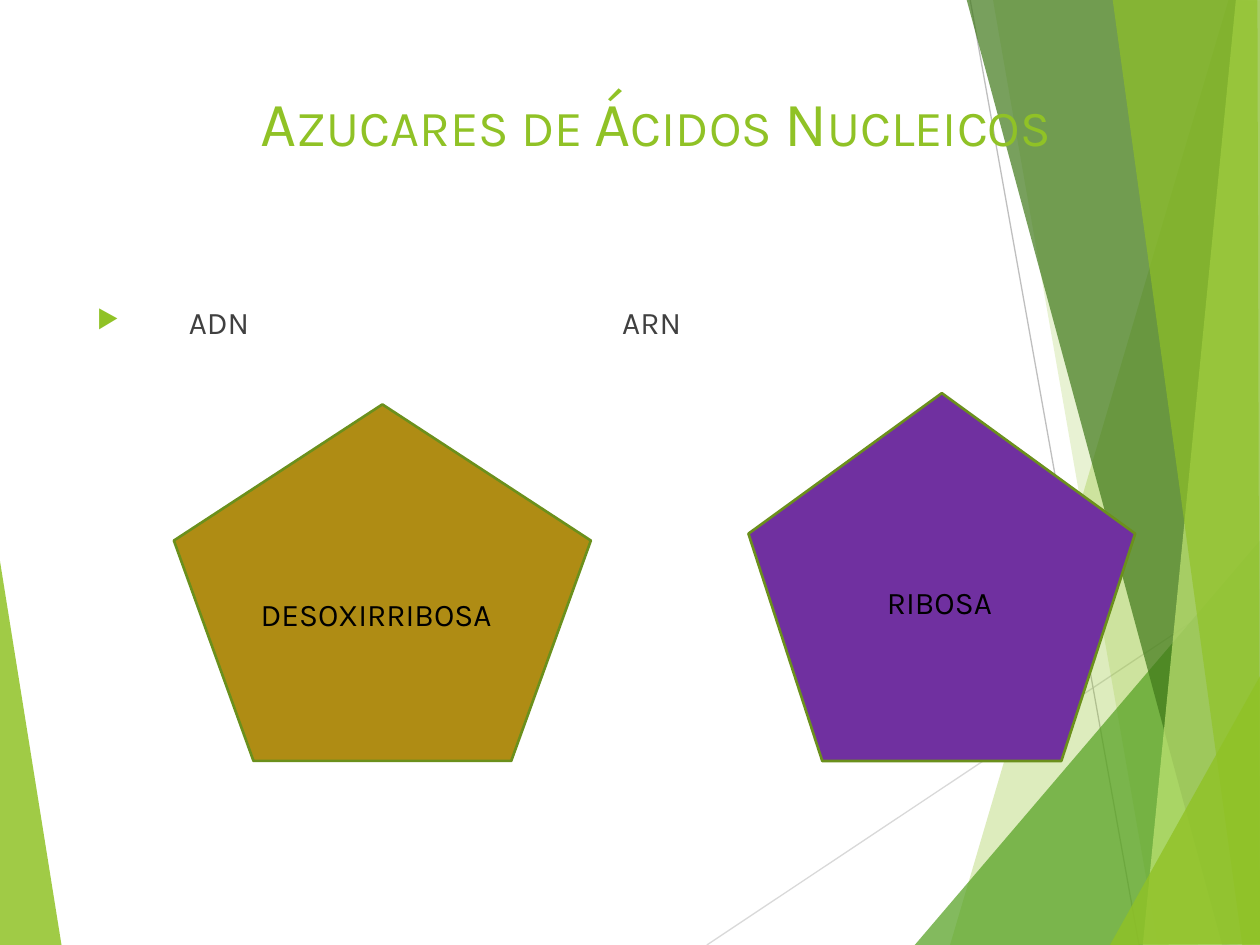
from lxml import etree
from pptx import Presentation
from pptx.dml.color import RGBColor
from pptx.enum.shapes import MSO_CONNECTOR, MSO_SHAPE
from pptx.enum.text import MSO_ANCHOR, MSO_AUTO_SIZE, PP_ALIGN
from pptx.oxml.ns import qn
from pptx.util import Inches, Pt

STRAIGHT = MSO_CONNECTOR.STRAIGHT
PENTAGON = MSO_SHAPE.REGULAR_PENTAGON
TOP = MSO_ANCHOR.TOP
LEFT = PP_ALIGN.LEFT
NO_AUTOSIZE = MSO_AUTO_SIZE.NONE
FIT_SHAPE = MSO_AUTO_SIZE.SHAPE_TO_FIT_TEXT

FONT = "Karla"
LIME = RGBColor(0x90, 0xC2, 0x26)
GREEN = RGBColor(0x54, 0xA0, 0x21)
DARK_GREEN = RGBColor(0x3F, 0x78, 0x19)
PALE_LIME = RGBColor(0xC0, 0xE4, 0x74)
OLIVE = RGBColor(0x6B, 0x90, 0x1C)
LIGHT_GRAY = RGBColor(0xD9, 0xD9, 0xD9)
GRAY = RGBColor(0xBF, 0xBF, 0xBF)
CHARCOAL = RGBColor(0x40, 0x40, 0x40)
BLACK = RGBColor(0, 0, 0)
OCHRE = RGBColor(0xAF, 0x8C, 0x14)
PURPLE = RGBColor(0x70, 0x30, 0xA0)

LEFT_FACET = ([(-0.01, 4.39), (0.49, 7.51), (-0.01, 7.5)], LIME, 85)
RIGHT_FACETS = [
    ([(9.75, 0), (7.54, 7.5), (10.02, 7.51), (10.01, 0.01)], LIME, 30),
    ([(7.88, -0.01), (9.19, 7.5), (10.01, 7.5), (10.01, -0.01)], LIME, 20),
    ([(7.26, 7.5), (10, 4.29), (10.01, 7.5)], GREEN, 72),
    ([(7.67, -0.01), (9.7, 7.5), (10.01, 7.49), (10.01, -0.01)], DARK_GREEN, 70),
    ([(9.81, -0.01), (9.07, 7.5), (10.01, 7.5), (10, -0.01)], PALE_LIME, 70),
    ([(8.83, -0.01), (9.86, 7.5), (10, 7.5), (9.98, -0.01)], LIME, 65),
    ([(8.81, 7.5), (10.01, 5.35), (10.01, 7.49)], LIME, 80),
]
RAYS = [
    ((5.61, 7.5), (10.01, 4.57), LIGHT_GRAY),
    ((7.7, 0), (9.04, 7.5), GRAY),
]
SUGARS = [
    ((1.38, 3.21, 3.31, 2.83), OCHRE),
    ((5.94, 3.12, 3.07, 2.92), PURPLE),
]
SUGAR_NAMES = [
    ("DESOXIRRIBOSA", (1.97, 4.67, 2.12, 0.4)),
    ("RIBOSA", (6.94, 4.58, 1.09, 0.4)),
]


def inches(values):
    """Convert a sequence of numbers to lengths."""
    return [Inches(value) for value in values]


def add_facet(slide, points, color, opacity):
    """Add a translucent polygon of the background."""
    start, *rest = [inches(point) for point in points]
    builder = slide.shapes.build_freeform(*start)
    builder.add_line_segments(rest)
    facet = builder.convert_to_shape()
    facet.shadow.inherit = False
    facet.fill.solid()
    facet.fill.fore_color.rgb = color
    facet.line.fill.background()
    fill_color = facet.fill._xPr.find(qn("a:solidFill"))[0]
    etree.SubElement(fill_color, qn("a:alpha"), val=str(opacity * 1000))


def add_ray(slide, start, end, color):
    """Add a thin background line."""
    ray = slide.shapes.add_connector(STRAIGHT, *inches(start + end))
    ray.line.color.rgb = color
    ray.line.width = Pt(0.75)
    etree.SubElement(ray._element.spPr, qn("a:effectLst"))


def style_font(paragraph, size, color):
    """Set the font of a paragraph."""
    paragraph.font.name = FONT
    paragraph.font.size = Pt(size)
    paragraph.font.color.rgb = color


def set_title(slide, text):
    """Place the title in front of the background."""
    title = slide.shapes.title
    title.left, title.top, title.width, title.height = inches((1.97, 0.61, 7.68, 1.25))
    frame = title.text_frame
    frame.text = text
    frame.vertical_anchor = TOP
    frame.auto_size = NO_AUTOSIZE
    paragraph = frame.paragraphs[0]
    paragraph.alignment = LEFT
    style_font(paragraph, 36, LIME)
    for run in paragraph.runs:
        run.font._element.set("cap", "small")
    slide.shapes._spTree.append(title._element)


def add_label(slide, text, box, color, wrap=False):
    """Add a line of text and return its paragraph."""
    frame = slide.shapes.add_textbox(*inches(box)).text_frame
    frame.word_wrap = wrap
    frame.auto_size = NO_AUTOSIZE if wrap else FIT_SHAPE
    frame.text = text
    paragraph = frame.paragraphs[0]
    style_font(paragraph, 18, color)
    return paragraph


def add_bullet(paragraph, indent):
    """Give a paragraph a green arrow bullet with a hanging indent."""
    properties = paragraph._p.get_or_add_pPr()
    properties.set("marL", str(Inches(indent)))
    properties.set("indent", str(-Inches(indent)))
    bullet_color = etree.Element(qn("a:buClr"))
    etree.SubElement(bullet_color, qn("a:srgbClr"), val=str(LIME))
    bullet_size = etree.Element(qn("a:buSzPct"), val="80000")
    bullet = etree.Element(qn("a:buChar"), char="▶")
    for position, part in enumerate((bullet_color, bullet_size, bullet)):
        properties.insert(position, part)


def add_sugar(slide, box, color):
    """Add the pentagon of a sugar."""
    sugar = slide.shapes.add_shape(PENTAGON, *inches(box))
    sugar.shadow.inherit = False
    sugar.fill.solid()
    sugar.fill.fore_color.rgb = color
    sugar.line.color.rgb = OLIVE
    sugar.line.width = Pt(1.5)


def main():
    """Build the slide and save it."""
    deck = Presentation()
    deck.slide_width, deck.slide_height = inches((10, 7.5))
    slide = deck.slides.add_slide(deck.slide_layouts[5])
    add_facet(slide, *LEFT_FACET)
    for ray in RAYS:
        add_ray(slide, *ray)
    for facet in RIGHT_FACETS:
        add_facet(slide, *facet)
    set_title(slide, "Azucares de Ácidos Nucleicos")
    dna = add_label(slide, "ADN", (0.67, 2.36, 4.1, 4.24), CHARCOAL, wrap=True)
    add_bullet(dna, 0.73)
    add_label(slide, "ARN", (4.84, 2.36, 0.67, 0.4), CHARCOAL)
    for sugar in SUGARS:
        add_sugar(slide, *sugar)
    for name, box in SUGAR_NAMES:
        add_label(slide, name, box, BLACK)
    deck.save("out.pptx")


if __name__ == "__main__":
    main()
